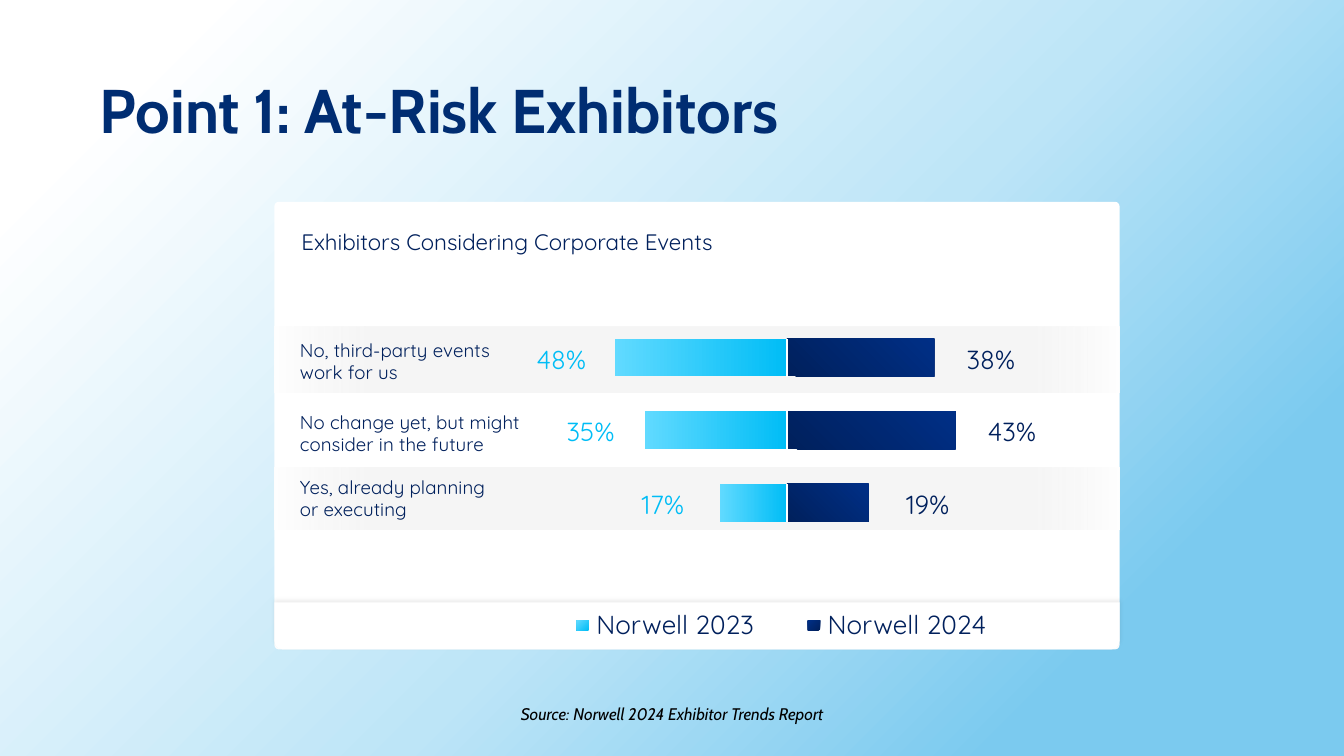
from lxml import etree
from pptx import Presentation
from pptx import oxml
from pptx import util as u
from pptx.dml.color import RGBColor
from pptx.enum import shapes as kinds, text as txt

A = 'xmlns:a="http://schemas.openxmlformats.org/drawingml/2006/main"'


class theme:
    head, body = "Cabin", "Quicksand"
    title, navy, sky, white, black = "002D72", "00205C", "00BDF6", "FFFFFF", "000000"
    # Gradient stops: position, colour, opacity, all in percent
    back = [(17, "7BCAEF", 50), (45, "BDE5F7", 50), (90, "FFFFFF", 100)]
    band = [(0, "FFFFFF", 100), (12, "F2F2F2", 70), (89, "F2F2F2", 70), (100, "FFFFFF", 100)]
    old = [(0, "00BDF6", 100), (100, "61DAFF", 100)]
    new = [(0, "00205C", 100), (100, "002F86", 100)]
    huge, large, mid, small, note = 58.7, 24.9, 21.3, 17.8, 16


def blend(stops, angle=None):
    """Gradient fill: linear at an angle, or centred on the lower right corner."""
    marks = "".join(
        f'<a:gs pos="{pos * 1000}"><a:srgbClr val="{tone}">'
        f'<a:alpha val="{solid * 1000}"/></a:srgbClr></a:gs>'
        for pos, tone, solid in stops)
    if angle is None:
        course = '<a:path path="circle"><a:fillToRect l="100000" t="100000"/></a:path>'
    else:
        course = f'<a:lin ang="{angle * 60000}" scaled="0"/>'
    return oxml.parse_xml(
        f'<a:gradFill {A} rotWithShape="1"><a:gsLst>{marks}</a:gsLst>{course}</a:gradFill>')


def write(frame, words, size, tone, font=theme.body, pad=0):
    """Put words in a text frame, one line break per listed line."""
    frame.word_wrap = True
    if pad == 0:
        frame.margin_left = frame.margin_right = frame.margin_top = frame.margin_bottom = 0
    para = frame.paragraphs[0]
    for i, line in enumerate(words):
        if i:
            para.add_line_break()
        para.add_run().text = line
    para.font.size = u.Pt(size)
    para.font.name = font
    para.font.color.rgb = RGBColor.from_string(tone)
    return para


deck = Presentation()
deck.slide_width, deck.slide_height = u.Cm(45.16), u.Cm(25.4)
slide = deck.slides.add_slide(deck.slide_layouts[5])

# Background
slide.background.fill.solid()
page = slide.element.cSld.bg.bgPr
page.replace(page[0], blend(theme.back))

# Title
title = slide.shapes.title
title.left, title.top, title.width, title.height = u.Cm(3.1), u.Cm(1.35), u.Cm(38.94), u.Cm(4.9)
title.text_frame.vertical_anchor = txt.MSO_ANCHOR.MIDDLE
title.text_frame.auto_size = txt.MSO_AUTO_SIZE.NONE
para = write(title.text_frame, ["Point 1: At-Risk Exhibitors"],
             theme.huge, theme.title, theme.head, 1)
para.alignment = txt.PP_ALIGN.LEFT
para.line_spacing = 0.9
para.font.bold = True

# Card, row bands, bars, legend strip and swatches
rows = [  # category lines, category top, 2023 value and bar width, 2024 value and bar width
    (["No, third-party events", "work for us"], 11.38, "48%", 5.79, "38%", 4.95),
    (["No change yet, but might", "consider in the future"], 13.79, "35%", 4.78, "43%", 5.66),
    (["Yes, already planning", "or executing"], 15.98, "17%", 2.26, "19%", 2.74),
]
keys = [("Norwell 2023", 19.38, theme.old), ("Norwell 2024", 27.15, theme.new)]
left, wide, axis, first, step, tall = 9.22, 28.4, 26.44, 11.38, 2.44, 1.27
tops = [first + i * step for i in range(len(rows))]
box = kinds.MSO_SHAPE.RECTANGLE

parts = [
    (kinds.MSO_SHAPE.ROUNDED_RECTANGLE, left, 6.78, wide, 15.04, None, 0),
    (box, left, 15.7, wide, 2.08, theme.band, 0),
    (box, left, 10.97, wide, 2.21, theme.band, 0),
]
for top, row in zip(tops, rows):
    parts.append((box, axis - row[3], top, row[3], tall, theme.old, 180))
    parts.append((box, axis, top, row[5], tall, theme.new, 315))
parts.append((kinds.MSO_SHAPE.ROUND_2_SAME_RECTANGLE, left, 20.24, wide, 1.58, None, 0))
for name, x, stops in keys:
    parts.append((box, x, 20.85, 0.41, 0.33, stops, 225))

card = slide.shapes.add_group_shape().shapes
for kind, x, y, w, h, stops, angle in parts:
    part = card.add_shape(kind, u.Cm(x), u.Cm(y), u.Cm(w), u.Cm(h))
    if stops:
        part.element.spPr.append(blend(stops, angle))
    else:
        part.fill.solid()
        part.fill.fore_color.rgb = RGBColor.from_string(theme.white)
    part.line.fill.background()
    part.shadow.inherit = False
    if kind == kinds.MSO_SHAPE.ROUNDED_RECTANGLE:
        part.adjustments[0] = 0.01
    elif kind == kinds.MSO_SHAPE.ROUND_2_SAME_RECTANGLE:
        part.adjustments[0], part.adjustments[1] = 0, 0.18
        glow = part.element.spPr.find(oxml.ns.qn("a:effectLst"))
        glow.append(oxml.parse_xml(
            f'<a:outerShdw {A} blurRad="50800" dist="38100" dir="16200000" rotWithShape="0">'
            f'<a:srgbClr val="{theme.black}"><a:alpha val="8000"/></a:srgbClr></a:outerShdw>'))

# Axis pieces
for top in tops:
    line = card.add_connector(kinds.MSO_CONNECTOR.STRAIGHT,
                              u.Cm(axis), u.Cm(top), u.Cm(axis), u.Cm(top + tall))
    line.line.color.rgb = RGBColor.from_string(theme.white)
    line.line.width = u.Pt(1.25)
    etree.SubElement(line.element.spPr, oxml.ns.qn("a:effectLst"))

# Card heading
head = card.add_textbox(u.Cm(10.13), u.Cm(7.54), u.Cm(20.62), u.Cm(1.12)).text_frame
head.vertical_anchor = txt.MSO_ANCHOR.MIDDLE
write(head, ["Exhibitors Considering Corporate Events"], theme.mid, theme.navy)

# Categories and values
for top, (words, y, old, back, new, ahead) in zip(tops, rows):
    label = card.add_textbox(u.Cm(10.08), u.Cm(y), u.Cm(7.57), u.Cm(0.74)).text_frame
    para = write(label, words, theme.small, theme.navy)
    para.space_after = u.Pt(2.7)
    for run in para.runs:
        run.font._element.set("spc", "10")
    for value, x, w, tone, side in [
        (old, axis - back - 2.62, 2.57, theme.sky, txt.PP_ALIGN.LEFT),
        (new, axis + ahead - 0.02, 2.74, theme.navy, txt.PP_ALIGN.RIGHT),
    ]:
        label = card.add_textbox(u.Cm(x), u.Cm(top + 0.15), u.Cm(w), u.Cm(1.07)).text_frame
        label.auto_size = txt.MSO_AUTO_SIZE.SHAPE_TO_FIT_TEXT
        write(label, [value], theme.large, tone).alignment = side

# Legend names
for name, x, stops in keys:
    label = card.add_textbox(u.Cm(x + 0.66), u.Cm(20.8), u.Cm(7.6), u.Cm(0.33)).text_frame
    label.vertical_anchor = txt.MSO_ANCHOR.MIDDLE
    write(label, [name], theme.large, theme.navy).space_after = u.Pt(8)

# Source line
foot = slide.shapes.add_textbox(u.Cm(16.69), u.Cm(23.52), u.Cm(11.79), u.Cm(0.94)).text_frame
para = write(foot, ["Source: Norwell 2024 Exhibitor Trends Report"],
             theme.note, theme.black, theme.head, 1)
para.alignment = txt.PP_ALIGN.CENTER
para.font.italic = True
foot.word_wrap = False
foot.auto_size = txt.MSO_AUTO_SIZE.SHAPE_TO_FIT_TEXT

deck.save("out.pptx")
